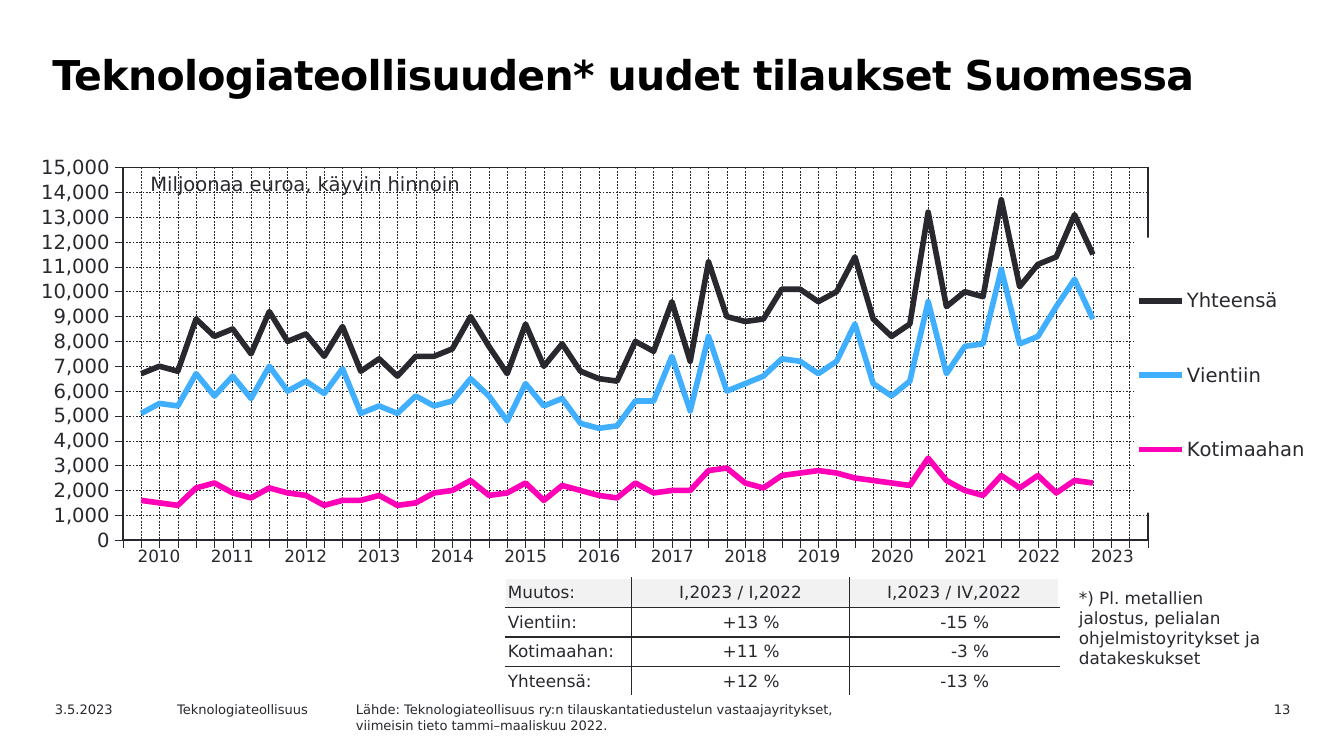
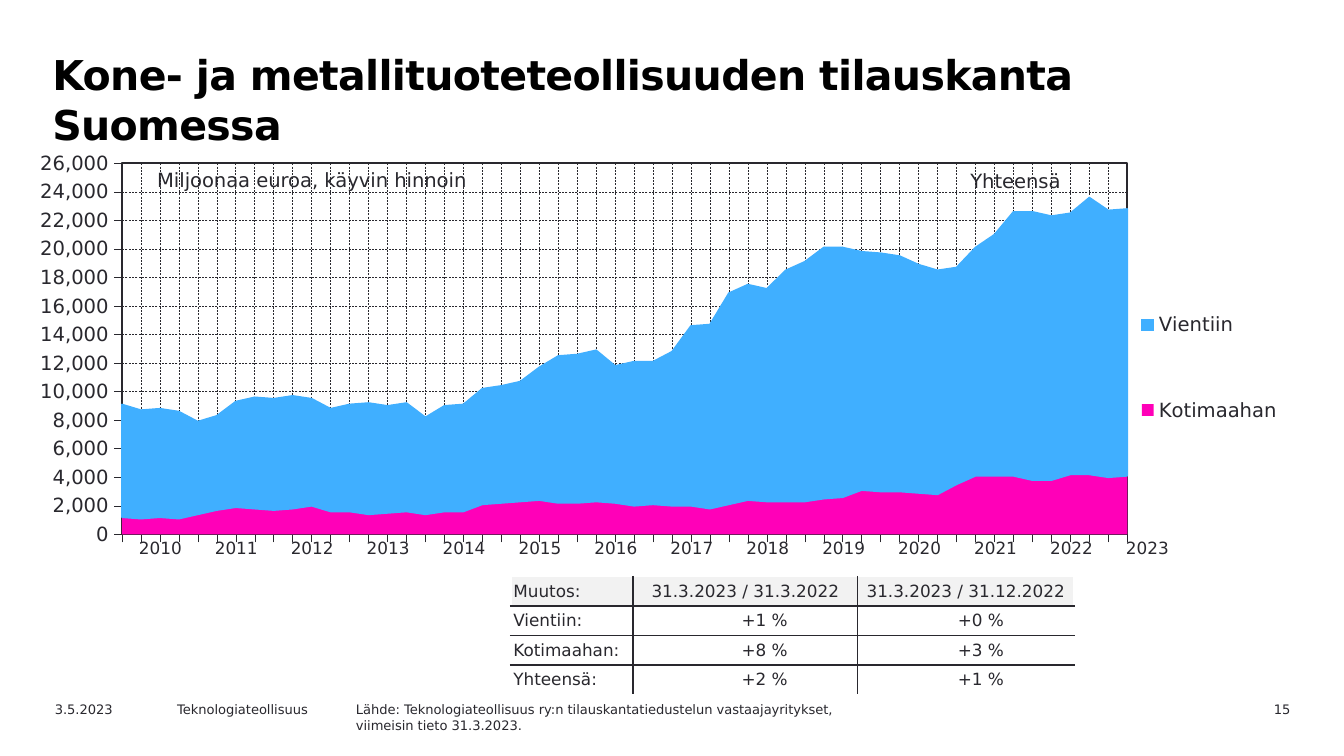
from dataclasses import dataclass
from typing import NamedTuple, Optional

from lxml.etree import SubElement
from pptx import Presentation
from pptx.chart.data import CategoryChartData
from pptx.dml.color import RGBColor
from pptx.enum.chart import XL_CHART_TYPE as ChartType
from pptx.enum.chart import XL_LEGEND_POSITION as LegendPosition
from pptx.enum.chart import XL_TICK_LABEL_POSITION as LabelPosition
from pptx.enum.chart import XL_TICK_MARK as TickMark
from pptx.enum.dml import MSO_LINE_DASH_STYLE as Dash
from pptx.enum.text import MSO_ANCHOR as Anchor
from pptx.enum.text import PP_ALIGN as Align
from pptx.oxml import parse_xml
from pptx.oxml.ns import nsdecls, qn
from pptx.util import Emu, Pt

EMU_PER_PX = 9144  # 100 px to the inch


@dataclass(frozen=True)
class Theme:
    ink: str = "29282E"
    title_ink: str = "000000"
    white: str = "FFFFFF"
    header: str = "F2F2F2"
    blue: str = "40AFFF"
    pink: str = "FF00B8"
    font: str = "DejaVu Sans"
    chart_font: str = "Arial"
    title_size: float = 22
    title_leading: float = 27
    chart_size: float = 10.5
    table_size: float = 9
    footer_size: float = 7
    table_style: str = "{2D5ABB26-0587-4C30-8999-92F81FD0307C}"


THEME = Theme()


class Box(NamedTuple):
    left: int
    top: int
    width: int
    height: int


class Insets(NamedTuple):
    left: int = 10
    top: int = 5
    right: int = 10
    bottom: int = 5


class Layout(NamedTuple):
    """Position inside a chart, as fractions of the chart."""
    x: float
    y: float
    w: float
    h: float


class Series(NamedTuple):
    name: str
    color: str
    values: list
    line: Optional[float] = None


class Label(NamedTuple):
    text: str
    box: Box
    size: float
    insets: Insets = Insets()
    wrap: bool = True


@dataclass
class ChartPart:
    kind: ChartType
    box: Box
    plot: Layout
    legend: Layout
    base_size: float
    maximum: int
    step: int
    series: list


@dataclass
class Page:
    number: int
    title: str
    title_width: int
    source_end: str
    chart: ChartPart
    years: Box
    changes: Box
    change_columns: list
    change_rows: list
    labels: list


def px(length: int) -> Emu:
    return Emu(length * EMU_PER_PX)


def place(box: Box) -> list:
    return [px(length) for length in box]


def style_font(font, size: float, color: str = THEME.ink, bold: bool = False,
               name: str = THEME.font) -> None:
    font.name, font.size, font.bold = name, Pt(size), bold
    font.color.rgb = RGBColor.from_string(color)


def style_line(line, color: str, width: float, dash: Optional[Dash] = None) -> None:
    line.color.rgb = RGBColor.from_string(color)
    line.width = Pt(width)
    if dash is not None:
        line.dash_style = dash


def set_insets(target, insets: Insets) -> None:
    target.margin_left, target.margin_top, target.margin_right, target.margin_bottom = place(insets)


# Text
def add_text(page, label: Label, align: Align = Align.LEFT):
    frame = page.shapes.add_textbox(*place(label.box)).text_frame
    frame.word_wrap = label.wrap
    set_insets(frame, label.insets)
    frame.text = label.text
    for para in frame.paragraphs:
        para.alignment = align
        style_font(para.font, label.size)
    return frame


def add_title(page, text: str, width: int) -> None:
    label = Label(text, Box(28, 31, width, 71), THEME.title_size, Insets(left=11))
    para = add_text(page, label).paragraphs[0]
    style_font(para.font, THEME.title_size, THEME.title_ink, bold=True)
    para.line_spacing = Pt(THEME.title_leading)
    para.runs[0]._r.get_or_add_rPr().set("spc", "-33")


def add_footer(page, number: int, source_end: str) -> None:
    source = ("Lähde: Teknologiateollisuus ry:n tilauskantatiedustelun "
              f"vastaajayritykset,\n{source_end}")
    for text, left, width, height, align in (
        (str(number), 876, 94, 18, Align.RIGHT),
        ("3.5.2023", 31, 100, 18, Align.LEFT),
        ("Teknologiateollisuus", 122, 142, 18, Align.LEFT),
        (source, 255, 507, 26, Align.LEFT),
    ):
        add_text(page, Label(text, Box(left, 517, width, height), THEME.footer_size), align)


# Chart
def set_layout(parent, index: int, layout: Layout, inner: bool = False) -> None:
    old = parent.find(qn("c:layout"))
    if old is not None:
        parent.remove(old)
    target = '<c:layoutTarget val="inner"/>' if inner else ""
    modes = "".join(f'<c:{axis}Mode val="edge"/>' for axis in "xy")
    sizes = "".join(f'<c:{key} val="{value}"/>' for key, value in layout._asdict().items())
    parent.insert(index, parse_xml(
        f'<c:layout {nsdecls("c")}><c:manualLayout>{target}{modes}{sizes}'
        '</c:manualLayout></c:layout>'))


def shape_properties(content: str):
    return parse_xml(f'<c:spPr {nsdecls("c", "a")}>{content}</c:spPr>')


def solid(color: str) -> str:
    return f'<a:solidFill><a:srgbClr val="{color}"/></a:solidFill>'


def style_axes(chart, part: ChartPart) -> None:
    category, value = chart.category_axis, chart.value_axis
    for axis in (category, value):
        axis.major_tick_mark, axis.minor_tick_mark = TickMark.OUTSIDE, TickMark.NONE
        axis.has_major_gridlines = True
        style_line(axis.format.line, THEME.ink, 0.22)
        style_line(axis.major_gridlines.format.line, THEME.ink, 0.25, Dash.DASH)
    category.tick_label_position = LabelPosition.NONE
    value.minimum_scale, value.maximum_scale = 0, part.maximum
    value.major_unit = part.step
    value.tick_labels.number_format = "#,##0"
    value.tick_labels.number_format_is_linked = False
    style_font(value.tick_labels.font, THEME.chart_size)
    # Points sit on the tick marks
    element = value._element
    between = element.find(qn("c:crossBetween"))
    if between is None:
        between = parse_xml(f'<c:crossBetween {nsdecls("c")}/>')
        element.find(qn("c:crosses")).addnext(between)
    between.set("val", "midCat")


def add_chart(page, part: ChartPart) -> None:
    data = CategoryChartData(number_format="#,##0")
    data.categories = [str(quarter) for quarter in range(1, 55)]
    for series in part.series:
        data.add_series(series.name, series.values)
    chart = page.shapes.add_chart(part.kind, *place(part.box), data).chart
    chart.has_title = False
    style_font(chart.font, part.base_size, bold=True, name=THEME.chart_font)
    style_axes(chart, part)

    plot = chart.plots[0]
    plot.vary_by_categories = False
    for drawn, series in zip(plot.series, part.series):
        if part.kind == ChartType.LINE:
            drawn.smooth = False
        else:
            drawn.format.fill.solid()
            drawn.format.fill.fore_color.rgb = RGBColor.from_string(series.color)
        if series.line:
            style_line(drawn.format.line, series.color, series.line)

    area = chart._chartSpace.chart.plotArea
    set_layout(area, 0, part.plot, inner=True)
    area.append(shape_properties(f'<a:noFill/><a:ln w="12700">{solid(THEME.ink)}</a:ln>'))

    chart.has_legend = True
    legend = chart.legend
    legend.position = LegendPosition.RIGHT
    legend.include_in_layout = False
    style_font(legend.font, THEME.chart_size)
    set_layout(legend._element, 1, part.legend)
    legend._element.find(qn("c:overlay")).addnext(
        shape_properties(f'{solid(THEME.white)}<a:ln><a:noFill/></a:ln>'))


# Tables
def add_table(page, box: Box, rows: int, columns: int):
    table = page.shapes.add_table(rows, columns, *place(box)).table
    table.first_row = table.horz_banding = False
    table._tbl.tblPr.find(qn("a:tableStyleId")).text = THEME.table_style
    return table


def write_cell(cell, text: str, align: Align, insets: Insets, fill: Optional[str] = None) -> None:
    cell.text = text
    set_insets(cell, insets)
    para = cell.text_frame.paragraphs[0]
    para.alignment = align
    style_font(para.font, THEME.table_size)
    if fill is None:
        cell.fill.background()
    else:
        cell.fill.solid()
        cell.fill.fore_color.rgb = RGBColor.from_string(fill)


def add_borders(cell, outer: dict) -> None:
    properties = cell._tc.get_or_add_tcPr()
    for side, is_outer in outer.items():
        line = SubElement(properties, qn(f"a:ln{side}"), w="12700")
        paint = SubElement(line, qn("a:solidFill"))
        SubElement(paint, qn("a:srgbClr"), val=THEME.white if is_outer else THEME.ink)


def add_years(page, box: Box) -> None:
    years = range(2010, 2024)
    table = add_table(page, box, 1, len(years))
    for column, year in enumerate(years):
        table.columns[column].width = px(box.width) // len(years)
        write_cell(table.cell(0, column), str(year), Align.CENTER, Insets())


def add_changes(page, box: Box, widths: list, rows: list) -> None:
    table = add_table(page, box, len(rows), len(widths))
    for column, width in enumerate(widths):
        table.columns[column].width = px(width)
    last_row, last_column = len(rows) - 1, len(widths) - 1
    for r, row in enumerate(rows):
        for c, text in enumerate(row):
            cell = table.cell(r, c)
            cell.vertical_anchor = Anchor.MIDDLE
            add_borders(cell, {"L": c == 0, "R": c == last_column,
                               "T": r == 0, "B": r == last_row})
            align = Align.LEFT if c == 0 else Align.CENTER if r == 0 else Align.RIGHT
            insets = Insets(2, 2, 52 if align == Align.RIGHT else 2, 2)
            fill = {0: THEME.header, last_row: THEME.white}.get(r)
            write_cell(cell, text, align, insets, fill)


# Content
UNIT = "Miljoonaa euroa, käyvin hinnoin"
UNIT_INSETS = Insets(9, 5, 9, 5)
GAP = [None] * 3

ORDERS = [
    Series("Yhteensä", THEME.ink, [None, 6700, 7000, 6800, 8900, 8200, 8500, 7500, 9200, 8000, 8300, 7400, 8600, 6800, 7300, 6600, 7400, 7400, 7700, 9000, 7800, 6700, 8700, 7000, 7900, 6800, 6500, 6400, 8000, 7600, 9600, 7200, 11200, 9000, 8800, 8900, 10100, 10100, 9600, 10000, 11400, 8900, 8200, 8700, 13200, 9400, 10000, 9800, 13700, 10200, 11100, 11400, 13100, 11500] + GAP, 3),
    Series("Vientiin", THEME.blue, [None, 5100, 5500, 5400, 6700, 5800, 6600, 5700, 7000, 6000, 6400, 5900, 6900, 5100, 5400, 5100, 5800, 5400, 5600, 6500, 5800, 4800, 6300, 5400, 5700, 4700, 4500, 4600, 5600, 5600, 7400, 5200, 8200, 6000, 6300, 6600, 7300, 7200, 6700, 7200, 8700, 6300, 5800, 6400, 9600, 6700, 7800, 7900, 10900, 7900, 8200, 9400, 10500, 8900] + GAP, 3),
    Series("Kotimaahan", THEME.pink, [None, 1600, 1500, 1400, 2100, 2300, 1900, 1700, 2100, 1900, 1800, 1400, 1600, 1600, 1800, 1400, 1500, 1900, 2000, 2400, 1800, 1900, 2300, 1600, 2200, 2000, 1800, 1700, 2300, 1900, 2000, 2000, 2800, 2900, 2300, 2100, 2600, 2700, 2800, 2700, 2500, 2400, 2300, 2200, 3300, 2400, 2000, 1800, 2600, 2100, 2600, 1900, 2400, 2300] + GAP, 3),
]
BACKLOG = [
    Series("Kotimaahan", THEME.pink, [1200, 1100, 1200, 1100, 1400, 1700, 1900, 1800, 1700, 1800, 2000, 1600, 1600, 1400, 1500, 1600, 1400, 1600, 1600, 2100, 2200, 2300, 2400, 2200, 2200, 2300, 2200, 2000, 2100, 2000, 2000, 1800, 2100, 2400, 2300, 2300, 2300, 2500, 2600, 3100, 3000, 3000, 2900, 2800, 3500, 4100, 4100, 4100, 3800, 3800, 4200, 4200, 4000, 4100]),
    Series("Vientiin", THEME.blue, [7900, 7600, 7600, 7500, 6500, 6600, 7400, 7800, 7800, 7900, 7500, 7200, 7500, 7800, 7500, 7600, 6800, 7400, 7500, 8100, 8200, 8400, 9300, 10300, 10400, 10600, 9600, 10100, 10000, 10800, 12600, 12900, 14800, 15100, 14900, 16200, 16800, 17600, 17500, 16700, 16700, 16500, 16000, 15700, 15200, 16000, 16900, 18500, 18800, 18500, 18300, 19400, 18700, 18700], 0.88),
]

PAGES = [
    Page(
        13, "Teknologiateollisuuden* uudet tilaukset Suomessa", 921,
        "viimeisin tieto tammi–maaliskuu 2022.",
        ChartPart(ChartType.LINE, Box(12, 111, 969, 333), Layout(0.082, 0.041, 0.787, 0.833),
                  Layout(0.86, 0.198, 0.132, 0.614), 19.5, 15000, 1000, ORDERS),
        Box(91, 402, 764, 31), Box(376, 430, 412, 88), [94, 162, 156],
        [("Muutos:", "I,2023 / I,2022", "I,2023 / IV,2022"), ("Vientiin:", "+13 %", "-15 %"),
         ("Kotimaahan:", "+11 %", "-3 %"), ("Yhteensä:", "+12 %", "-13 %")],
        [Label(UNIT, Box(103, 123, 260, 27), THEME.chart_size, UNIT_INSETS, False),
         Label("*) Pl. metallien jalostus, pelialan ohjelmistoyritykset ja datakeskukset",
               Box(793, 432, 166, 71), THEME.table_size)],
    ),
    Page(
        15, "Kone- ja metallituoteteollisuuden tilauskanta Suomessa", 874,
        "viimeisin tieto 31.3.2023.",
        ChartPart(ChartType.AREA_STACKED, Box(20, 111, 969, 312),
                  Layout(0.073, 0.034, 0.772, 0.885), Layout(0.854, 0.243, 0.108, 0.556),
                  18.2, 26000, 2000, BACKLOG),
        Box(91, 396, 791, 31), Box(380, 429, 419, 88), [91, 167, 161],
        [("Muutos:", "31.3.2023 / 31.3.2022", "31.3.2023 / 31.12.2022"),
         ("Vientiin:", "+1 %", "+0 %"), ("Kotimaahan:", "+8 %", "+3 %"),
         ("Yhteensä:", "+2 %", "+1 %")],
        [Label(UNIT, Box(108, 120, 260, 27), THEME.chart_size, UNIT_INSETS, False),
         Label("Yhteensä", Box(713, 122, 106, 27), THEME.chart_size, Insets(9, 4, 9, 4))],
    ),
]


def main() -> None:
    deck = Presentation()
    deck.slide_width = px(1000)
    deck.slide_height = deck.slide_width * 9 // 16
    for content in PAGES:
        page = deck.slides.add_slide(deck.slide_layouts[6])
        add_title(page, content.title, content.title_width)
        add_footer(page, content.number, content.source_end)
        add_chart(page, content.chart)
        for label in content.labels:
            add_text(page, label)
        add_changes(page, content.changes, content.change_columns, content.change_rows)
        add_years(page, content.years)
    deck.save("out.pptx")


if __name__ == "__main__":
    main()
